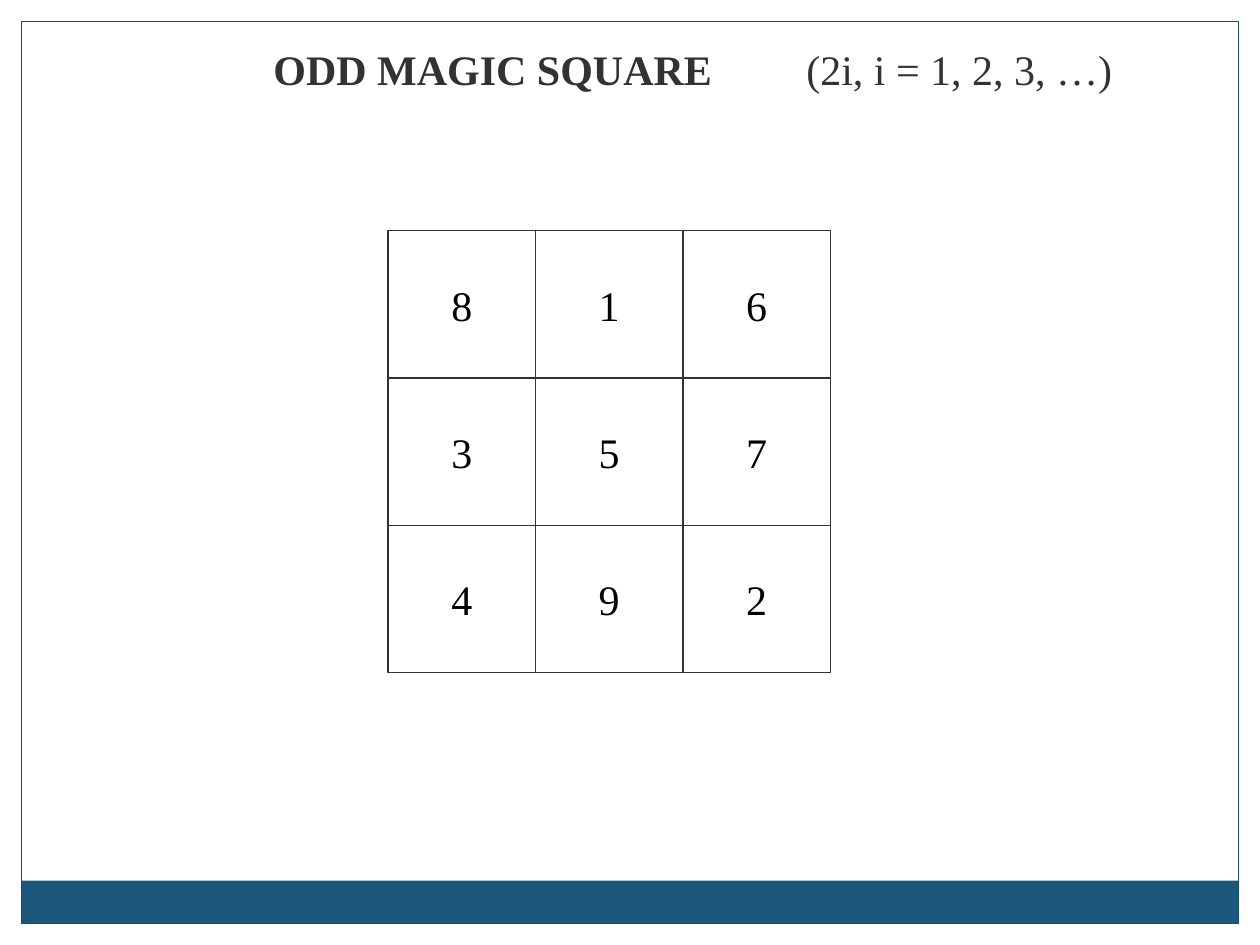
from lxml import etree
from pptx import Presentation
from pptx import util as u
from pptx.dml.color import RGBColor
from pptx.enum import shapes, text
from pptx.oxml import ns

# Content
TITLE = [("ODD MAGIC SQUARE", True), ("\t(2i, i = 1, 2, 3, …)", False)]
MAGIC_SQUARE = [(8, 1, 6),
                (3, 5, 7),
                (4, 9, 2)]

# Layout in inches
WIDTH, HEIGHT = 10, 7.5
MARGIN = 0.17
FOOTER_HEIGHT = 0.34
CELL = 1.17
GRID_LEFT, GRID_TOP = 3.08, 1.83
TITLE_BOX = (0.25, MARGIN, WIDTH - 0.5, 0.75)
TITLE_INDENT, TITLE_TAB = 1.92, 4.23

WHITE, BLUE, DARK_BLUE = "FFFFFF", "1B587C", "184E6D"
GRAY, BLACK = "323232", "000000"


def color(value):
    return RGBColor.from_string(value)


def add_rectangle(slide, box, fill=None, line=None):
    shape = slide.shapes.add_shape(shapes.MSO_SHAPE.RECTANGLE, *map(u.Inches, box))
    shape.shadow.inherit = False
    if fill:
        shape.fill.solid()
        shape.fill.fore_color.rgb = color(fill)
    else:
        shape.fill.background()
    if line:
        shape.line.color.rgb = color(line)
        shape.line.width = u.Pt(0.75)
    else:
        shape.line.fill.background()
    return shape


def add_run(paragraph, words, font_color, bold=False):
    run = paragraph.add_run()
    run.text = words
    font_format = {"name": "Times New Roman", "size": u.Pt(24), "bold": bold}
    for name, value in font_format.items():
        setattr(run.font, name, value)
    run.font.color.rgb = color(font_color)


presentation = Presentation()
presentation.slide_width = u.Inches(WIDTH)
presentation.slide_height = u.Inches(HEIGHT)
slide = presentation.slides.add_slide(presentation.slide_layouts[6])

# Edge bands, footer bar and border
inner_width, inner_height = WIDTH - 2 * MARGIN, HEIGHT - 2 * MARGIN
for box, fill, line in [
    ((0, 0, WIDTH, MARGIN), WHITE, None),
    ((WIDTH - MARGIN, 0, MARGIN, HEIGHT), WHITE, None),
    ((0, 0, MARGIN, HEIGHT), WHITE, None),
    ((MARGIN, HEIGHT - MARGIN - FOOTER_HEIGHT, inner_width, FOOTER_HEIGHT), BLUE, None),
    ((MARGIN, MARGIN, inner_width, inner_height), None, DARK_BLUE),
]:
    add_rectangle(slide, box, fill, line)

# Title, with a tab stop before the formula
frame = slide.shapes.add_textbox(*map(u.Inches, TITLE_BOX)).text_frame
title_format = {"word_wrap": True, "vertical_anchor": text.MSO_ANCHOR.MIDDLE,
                "margin_left": u.Inches(TITLE_INDENT)}
for name, value in title_format.items():
    setattr(frame, name, value)
paragraph = frame.paragraphs[0]
paragraph.alignment = text.PP_ALIGN.LEFT
tab_stops = etree.SubElement(paragraph._p.get_or_add_pPr(), ns.qn("a:tabLst"))
etree.SubElement(tab_stops, ns.qn("a:tab"), pos=str(u.Inches(TITLE_TAB)), algn="l")
for words, bold in TITLE:
    add_run(paragraph, words, GRAY, bold)

# Magic square
for row, numbers in enumerate(MAGIC_SQUARE):
    for column, number in enumerate(numbers):
        box = (GRID_LEFT + column * CELL, GRID_TOP + row * CELL, CELL, CELL)
        frame = add_rectangle(slide, box, line=GRAY).text_frame
        frame.word_wrap = False
        frame.vertical_anchor = text.MSO_ANCHOR.MIDDLE
        frame.paragraphs[0].alignment = text.PP_ALIGN.CENTER
        add_run(frame.paragraphs[0], str(number), BLACK)

presentation.save("out.pptx")
